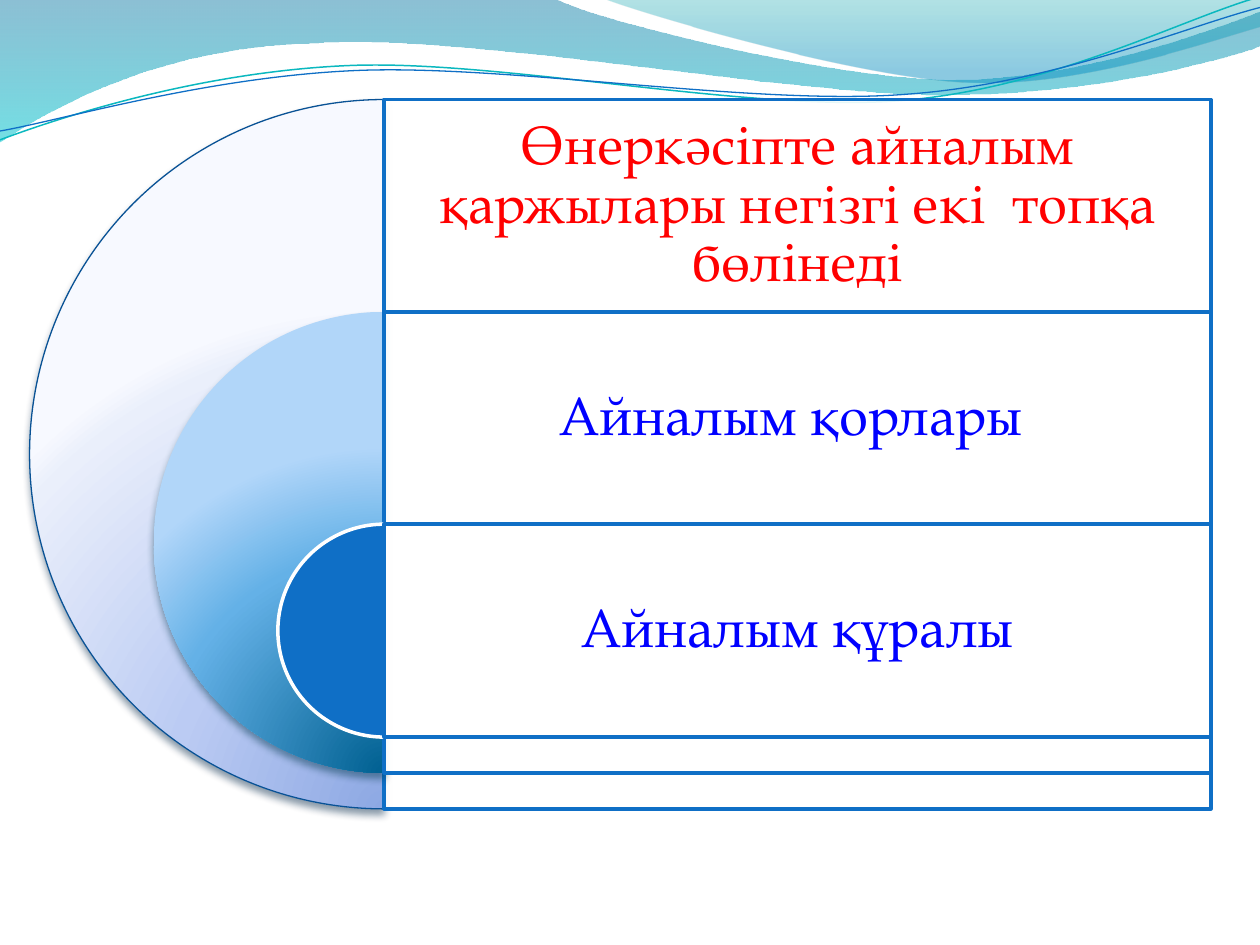
from math import cos, radians, sin

from lxml.etree import SubElement
from pptx import Presentation
from pptx.dml.color import RGBColor
from pptx.enum.shapes import MSO_SHAPE
from pptx.enum.text import MSO_ANCHOR, PP_ALIGN
from pptx.oxml import parse_xml
from pptx.oxml.ns import nsdecls, qn
from pptx.util import Inches, Pt

THEME = {
    "font": "TeX Gyre Pagella",
    "size": Pt(31),
    "heading": RGBColor.from_string("FF0000"),
    "item": RGBColor.from_string("0000FF"),
    "panel": RGBColor.from_string("FFFFFF"),
    "accent": RGBColor.from_string("0F6FC6"),
    "teal": RGBColor.from_string("0AB8BF"),
    "outer_edge": RGBColor.from_string("095295"),
    # Gradient stops: position %, colour, opacity %
    "wave_left": [(0, "0074A1", 45), (100, "00C6CF", 55)],
    "wave_right": [(0, "00A1A9", 30), (80, "008BBF", 45)],
    "outer": [(0, "8DA8E3", 100), (43, "BBCBF3", 100), (93, "EAEFFB", 100), (100, "F7F9FF", 100)],
    "middle": [(0, "006091", 100), (68, "64B1E7", 100), (100, "B1D6F9", 100)],
    "outer_shadow": "042747",
    "middle_shadow": "00374C",
}
DOWNWARD = '<a:lin ang="5400000" scaled="0"/>'
FROM_BELOW = ('<a:path path="circle"><a:fillToRect l="50000" t="130000" '
              'r="50000" b="-30000"/></a:path>')


def trace(shapes, start, segments, close):
    """Draw a freeform from lines (one point) and Bezier curves (three points)."""
    first, *rest = [(Inches(x), Inches(y))
                    for x, y in [start, *(point for segment in segments for point in segment)]]
    builder = shapes.build_freeform(*first)
    builder.add_line_segments(rest, close=close)
    outline = builder.convert_to_shape()
    outline.shadow.inherit = False
    steps = iter(list(outline._element.iter(qn("a:lnTo"))))
    for segment in segments:
        parts = [next(steps) for _ in segment]
        if len(parts) == 3:
            curve = parse_xml(f'<a:cubicBezTo {nsdecls("a")}/>')
            parts[0].addprevious(curve)
            for part in parts:
                curve.append(part[0])
                part.getparent().remove(part)
    return outline


def fill_gradient(shape, stops, direction):
    shape.fill.background()
    stop_xml = "".join(
        f'<a:gs pos="{position * 1000}"><a:srgbClr val="{color}">'
        f'<a:alpha val="{opacity * 1000}"/></a:srgbClr></a:gs>'
        for position, color, opacity in stops)
    properties = shape._element.spPr
    properties.replace(properties.find(qn("a:noFill")), parse_xml(
        f'<a:gradFill {nsdecls("a")} rotWithShape="1"><a:gsLst>{stop_xml}</a:gsLst>'
        f'{direction}</a:gradFill>'))


prs = Presentation()
prs.slide_width, prs.slide_height = Inches(10), Inches(7.5)
slide = prs.slides.add_slide(prs.slide_layouts[6])

# Waves along the top
waves = [
    ("wave_left", (0, 0), [
        [(4.4, -0.01)],
        [(4.76, 0.17), (6.64, 0.63), (7.58, 0.63)],
        [(8.53, 0.63), (9.58, 0.26), (10, 0.09)],
        [(10.01, 0.36)],
        [(9.83, 0.44), (8.7, 0.76), (7.46, 0.75)],
        [(6.22, 0.75), (3.82, 0.28), (2.57, 0.34)],
        [(1.29, 0.36), (0.46, 0.83), (-0.01, 1.13)],
        [(0, 0)],
    ]),
    ("wave_right", (4.79, -0.01), [
        [(5.09, 0.11), (6.82, 0.62), (7.69, 0.65)],
        [(8.56, 0.69), (9.61, 0.32), (10, 0.21)],
        [(10, 0)],
        [(4.79, -0.01)],
    ]),
]
for stops, start, segments in waves:
    wave = trace(slide.shapes, start, segments, close=True)
    fill_gradient(wave, THEME[stops], DOWNWARD)
    wave.line.fill.background()

# Thin strands: laid out level about their centre, then tilted as shapes
TILT = 2.7
strands = [
    ("teal", 0.85, (4.99, 0.58), [
        [(0, 1.11)],
        [(0.48, 0.93), (1.58, 0.57), (2.77, 0.52)],
        [(3.95, 0.47), (5.93, 0.89), (7.13, 0.8)],
        [(8.33, 0.71), (9.38, 0.15), (9.98, -0.02)],
    ]),
    ("accent", 0.75, (5, 0.59), [
        [(0, 1.04)],
        [(0.47, 0.96), (1.64, 0.61), (2.83, 0.56)],
        [(4.03, 0.51), (5.97, 0.84), (7.17, 0.75)],
        [(8.36, 0.67), (9.41, 0.21), (10, 0.06)],
    ]),
]
across, down = cos(radians(TILT)), sin(radians(TILT))
strand_group = slide.shapes.add_group_shape()
for color, width, (center_x, center_y), segments in strands:
    (start,), *curves = [
        [(center_x + (x - center_x) * across - (y - center_y) * down,
          center_y + (x - center_x) * down + (y - center_y) * across) for x, y in segment]
        for segment in segments]
    strand = trace(strand_group.shapes, start, curves, close=False)
    strand.rotation = 360 - TILT
    strand.fill.background()
    strand.line.color.rgb = THEME[color]
    strand.line.width = Pt(width)

# Nested half circles, each with a panel and its text
AXIS, TOP, LAST_TOP, PANEL_WIDTH = 3.05, 0.79, 4.16, 6.56
DIAMETER, SHRINK = 5.63, 1.97
BAND = (LAST_TOP - TOP) / 2
rings = [
    ("Өнеркәсіпте айналым қаржылары негізгі екі  топқа бөлінеді", "heading",
     "outer", "outer_edge", 0.75, "outer_shadow"),
    ("Айналым қорлары ", "item", "middle", None, 0, "middle_shadow"),
    ("Айналым құралы", "item", None, "panel", 2, None),
]
shapes = slide.shapes.add_group_shape().shapes
for level, (label, label_color, stops, edge, edge_width, shade) in enumerate(rings):
    top = Inches(TOP + level * BAND)
    size = DIAMETER - level * SHRINK

    half_circle = shapes.add_shape(MSO_SHAPE.PIE, Inches(AXIS - size / 2), top,
                                   Inches(size), Inches(size))
    half_circle.adjustments[0], half_circle.adjustments[1] = 54, 162
    half_circle.shadow.inherit = False
    if stops:
        fill_gradient(half_circle, THEME[stops], FROM_BELOW)
    else:
        half_circle.fill.solid()
        half_circle.fill.fore_color.rgb = THEME["accent"]
    if edge:
        half_circle.line.color.rgb = THEME[edge]
        half_circle.line.width = Pt(edge_width)
    else:
        half_circle.line.fill.background()
    if shade:
        half_circle._element.spPr.find(qn("a:effectLst")).append(parse_xml(
            f'<a:outerShdw {nsdecls("a")} blurRad="{Pt(4.5)}" dist="{Pt(3)}" dir="5400000" '
            f'rotWithShape="0"><a:srgbClr val="{THEME[shade]}"><a:alpha val="48000"/>'
            f'</a:srgbClr></a:outerShdw>'))

    panel = shapes.add_shape(MSO_SHAPE.RECTANGLE, Inches(AXIS), top,
                             Inches(PANEL_WIDTH), Inches(size))
    panel.shadow.inherit = False
    panel.fill.solid()
    panel.fill.fore_color.rgb = THEME["panel"]
    panel_color = panel._element.spPr.find(qn("a:solidFill")).find(qn("a:srgbClr"))
    SubElement(panel_color, qn("a:alpha")).set("val", "90000")
    panel.line.color.rgb = THEME["accent"]
    panel.line.width = Pt(2)

    frame = shapes.add_textbox(Inches(AXIS), top, Inches(PANEL_WIDTH), Inches(BAND)).text_frame
    frame_format = {"word_wrap": True, "vertical_anchor": MSO_ANCHOR.MIDDLE}
    frame_format |= {f"margin_{side}": Inches(0.13) for side in ("left", "top", "right", "bottom")}
    for attribute, value in frame_format.items():
        setattr(frame, attribute, value)
    paragraph = frame.paragraphs[0]
    paragraph.alignment, paragraph.line_spacing = PP_ALIGN.CENTER, 0.9
    run = paragraph.add_run()
    run.text = label
    for attribute, value in {"name": THEME["font"], "size": THEME["size"]}.items():
        setattr(run.font, attribute, value)
    run.font.color.rgb = THEME[label_color]

prs.save("out.pptx")
